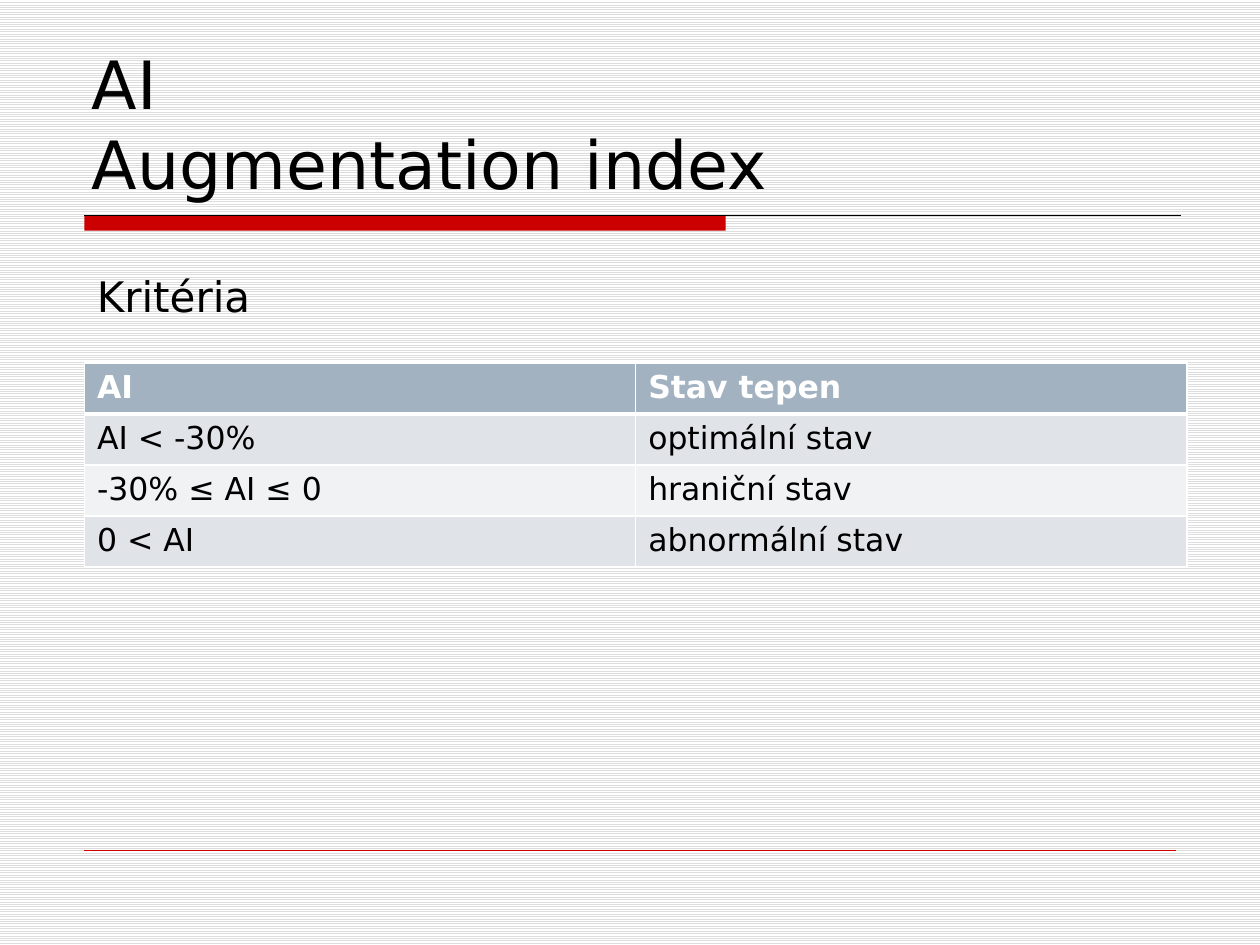
from dataclasses import dataclass

from lxml.etree import SubElement
from pptx import Presentation
from pptx.dml.color import RGBColor
from pptx.enum.dml import MSO_PATTERN
from pptx.enum.shapes import MSO_CONNECTOR, MSO_SHAPE
from pptx.enum.text import MSO_ANCHOR
from pptx.oxml.ns import qn
from pptx.util import Inches, Pt


@dataclass(frozen=True)
class Theme:
    """Colours, font and type sizes of the slide."""
    font: str = "DejaVu Sans"
    ink: str = "000000"
    paper: str = "FFFFFF"
    stripe: str = "DDDDDD"
    accent: str = "CC0000"
    header: str = "A3B2C1"
    bands: tuple = ("E0E4E9", "F0F2F4")
    title_size: int = 38
    heading_size: int = 24
    table_size: int = 18


THEME = Theme()
CRITERIA = [
    ("AI", "Stav tepen"),
    ("AI < -30%", "optimální stav"),
    ("-30% ≤ AI ≤ 0", "hraniční stav"),
    ("0 < AI", "abnormální stav"),
]


def colour(code):
    """Return the RGB colour for a hex code."""
    return RGBColor.from_string(code)


def set_text(frame, text, size, ink=THEME.ink, bold=False):
    """Write one paragraph into a text frame and format it."""
    para = frame.paragraphs[0]
    para.text = text
    for span in para.runs:
        span.font.color.rgb = colour(ink)
        for name, value in {"name": THEME.font, "size": Pt(size), "bold": bold}.items():
            setattr(span.font, name, value)


def add_text(page, box, text, size, **frame_format):
    """Add a text box with the given frame settings."""
    frame = page.shapes.add_textbox(*map(Inches, box)).text_frame
    for name, value in frame_format.items():
        setattr(frame, name, value)
    set_text(frame, text, size)


def add_rule(page, left, top, width, ink, weight):
    """Draw a horizontal line."""
    ends = map(Inches, (left, top, left + width, top))
    rule = page.shapes.add_connector(MSO_CONNECTOR.STRAIGHT, *ends)
    rule.line.color.rgb = colour(ink)
    rule.line.width = Pt(weight)
    SubElement(rule._element.spPr, qn("a:effectLst"))


def add_title_bar(page, box):
    """Add the accent bar with the thin rule along its top edge."""
    left, top, width, height = box
    bar = page.shapes.add_shape(
        MSO_SHAPE.RECTANGLE, *map(Inches, (left, top, 5.09, height)))
    bar.shadow.inherit = False
    bar.fill.solid()
    bar.fill.fore_color.rgb = colour(THEME.accent)
    bar.line.fill.background()
    add_rule(page, left, top, width, THEME.ink, 0.75)


def set_borders(cell, weights):
    """Give a cell white borders of the given weights by side."""
    properties = cell._tc.get_or_add_tcPr()
    for side, weight in weights.items():
        line = SubElement(properties, qn(f"a:ln{side}"), w=str(Pt(weight)))
        fill = SubElement(line, qn("a:solidFill"))
        SubElement(fill, qn("a:srgbClr"), val=THEME.paper)


def add_criteria_table(page, box, rows):
    """Add the banded table with its header row."""
    table = page.shapes.add_table(len(rows), len(rows[0]), *map(Inches, box)).table
    for row, texts in enumerate(rows):
        is_header = row == 0
        fill = THEME.header if is_header else THEME.bands[(row - 1) % 2]
        ink = THEME.paper if is_header else THEME.ink
        weights = {"L": 1, "R": 1, "T": 3 if row == 1 else 1, "B": 3 if is_header else 1}
        for column, text in enumerate(texts):
            cell = table.cell(row, column)
            set_borders(cell, weights)
            cell.fill.solid()
            cell.fill.fore_color.rgb = colour(fill)
            set_text(cell.text_frame, text, THEME.table_size, ink, is_header)


def set_background(page):
    """Fill the page with fine horizontal stripes."""
    fill = page.background.fill
    fill.patterned()
    fill.pattern = MSO_PATTERN.LIGHT_HORIZONTAL
    fill.fore_color.rgb = colour(THEME.stripe)
    fill.back_color.rgb = colour(THEME.paper)


def main():
    """Build the slide and save the deck."""
    deck = Presentation()
    deck.slide_width, deck.slide_height = Inches(10), Inches(7.5)
    page = deck.slides.add_slide(deck.slide_layouts[6])
    set_background(page)
    add_title_bar(page, (0.67, 1.71, 8.7, 0.12))
    add_rule(page, 0.67, 6.75, 8.66, THEME.accent, 0.25)
    add_text(page, (0.63, 0.33, 8.75, 1.33), "AI\vAugmentation index",
             THEME.title_size, word_wrap=True, vertical_anchor=MSO_ANCHOR.BOTTOM)
    add_criteria_table(page, (0.67, 2.88, 8.75, 1.62), CRITERIA)
    add_text(page, (0.67, 2.1, 1.44, 0.5), "Kritéria",
             THEME.heading_size, word_wrap=False)
    deck.save("out.pptx")


if __name__ == "__main__":
    main()
